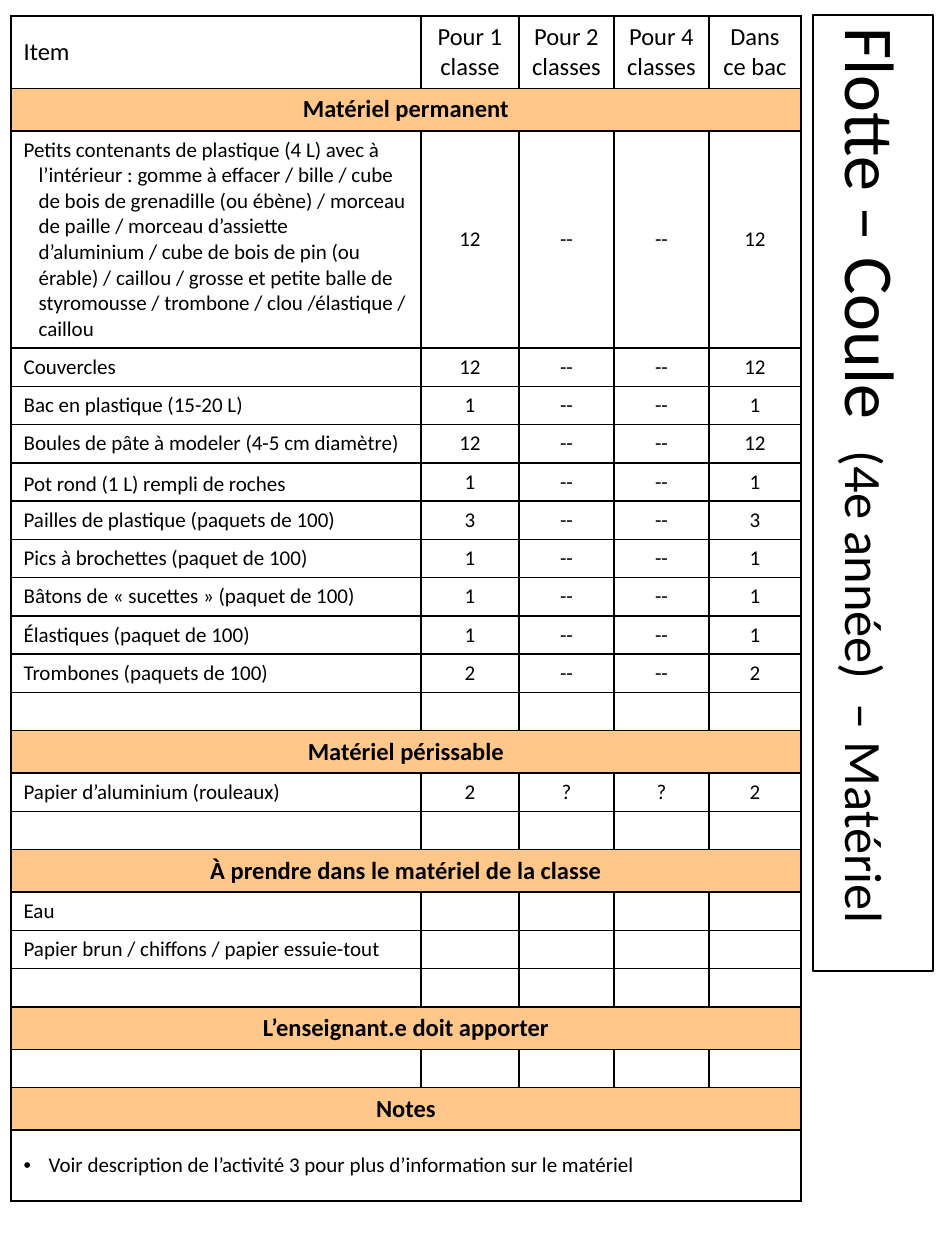
"""Build the one-page material checklist for the Flotte – Coule activity."""
from dataclasses import dataclass

from lxml.etree import SubElement
from pptx import Presentation
from pptx.dml.color import RGBColor
from pptx.enum.text import MSO_ANCHOR, MSO_AUTO_SIZE, PP_ALIGN
from pptx.oxml.ns import qn
from pptx.util import Pt

PX = 914400 // 126

TITLE = [
    ("Flotte – Coule", 40, 0),
    (" ", 40, 9),
    ("(4e année)", 30, 0),
    (" ", 30, 7),
    ("– Matériel", 30, 0),
]
HEADINGS = ["Item", "Pour 1 classe", "Pour 2 classes", "Pour 4 classes", "Dans ce bac"]
BLANK = ("", "", "")
KITS = (
    "Petits contenants de plastique (4 L) avec à l’intérieur : gomme à effacer / bille / "
    "cube de bois de grenadille (ou ébène) / morceau de paille / morceau d’assiette "
    "d’aluminium / cube de bois de pin (ou érable) / caillou / grosse et petite balle de "
    "styromousse / trombone / clou /élastique / caillou"
)
ROCK_POT = "Pot rond (1 L) rempli de roches"
SECTIONS = [
    ("Matériel permanent", [
        (KITS, "12", "--"),
        ("Couvercles", "12", "--"),
        ("Bac en plastique (15-20 L)", "1", "--"),
        ("Boules de pâte à modeler (4-5 cm diamètre)", "12", "--"),
        (ROCK_POT, "1", "--"),
        ("Pailles de plastique (paquets de 100)", "3", "--"),
        ("Pics à brochettes (paquet de 100)", "1", "--"),
        ("Bâtons de «\u00a0sucettes\u00a0» (paquet de 100)", "1", "--"),
        ("Élastiques (paquet de 100)", "1", "--"),
        ("Trombones (paquets de 100)", "2", "--"),
        BLANK,
    ]),
    ("Matériel périssable", [("Papier d’aluminium (rouleaux)", "2", "?"), BLANK]),
    ("À prendre dans le matériel de la classe", [
        ("Eau", "", ""),
        ("Papier brun / chiffons / papier essuie-tout", "", ""),
        BLANK,
    ]),
    ("L’enseignant.e doit apporter", [BLANK]),
]
NOTES_HEADING = "Notes"
NOTE = "Voir description de l’activité 3 pour plus d’information sur le matériel"

COLUMNS = [410, 98, 95, 95, 92]
HEIGHTS = {"head": 72, "section": 42, "item": 38, "note": 71}
KITS_HEIGHT = 217
TABLE_LEFT, TABLE_TOP = 11, 16
TITLE_BOX = (395, 433, 956, 120)
ITEM_HANG, NOTE_HANG = 15, 25


@dataclass(frozen=True)
class Theme:
    font: str = "Calibri"
    bullet_font: str = "Arial"
    ink: RGBColor = RGBColor(0, 0, 0)
    band: RGBColor = RGBColor(0xFF, 0xC7, 0x89)
    heading: int = 14
    body: int = 12
    grid: float = 1
    frame: float = 1.5


THEME = Theme()


def style_run(run, size, bold=False):
    run.font.name = THEME.font
    run.font.size = Pt(size)
    run.font.bold = bold
    run.font.color.rgb = THEME.ink


def add_title(slide):
    title = slide.shapes.title
    title.left, title.top, title.width, title.height = (v * PX for v in TITLE_BOX)
    title.rotation = 90
    title.fill.background()
    title.line.color.rgb = THEME.ink
    title.line.width = Pt(THEME.frame)
    frame = title.text_frame
    frame.word_wrap = True
    frame.auto_size = MSO_AUTO_SIZE.NONE
    frame.vertical_anchor = MSO_ANCHOR.MIDDLE
    paragraph = frame.paragraphs[0]
    paragraph.alignment = PP_ALIGN.LEFT
    for words, size, spacing in TITLE:
        run = paragraph.add_run()
        run.text = words
        style_run(run, size)
        if spacing:
            run._r.get_or_add_rPr().set("spc", str(spacing * 100))


def draw_borders(cell):
    properties = cell._tc.get_or_add_tcPr()
    for side in ("lnL", "lnR", "lnT", "lnB"):
        border = SubElement(properties, qn(f"a:{side}"), w=str(Pt(THEME.grid)))
        paint = SubElement(border, qn("a:solidFill"))
        SubElement(paint, qn("a:srgbClr"), val=str(THEME.ink))


def hang(paragraph, indent, bullet=None):
    properties = paragraph._p.get_or_add_pPr()
    properties.set("marL", str(indent * PX))
    properties.set("indent", str(-indent * PX))
    if bullet:
        SubElement(properties, qn("a:buFont"), typeface=THEME.bullet_font)
        SubElement(properties, qn("a:buChar"), char=bullet)


def fill_cell(cell, words, kind, column):
    draw_borders(cell)
    if kind == "section":
        cell.fill.solid()
        cell.fill.fore_color.rgb = THEME.band
    else:
        cell.fill.background()
    cell.vertical_anchor = MSO_ANCHOR.MIDDLE
    size = THEME.heading if kind in ("head", "section") else THEME.body
    paragraph = cell.text_frame.paragraphs[0]
    if not words:
        SubElement(paragraph._p, qn("a:endParaRPr"), sz=str(size * 100))
        return
    paragraph.text = words
    centred = column > 0 or kind == "section"
    paragraph.alignment = PP_ALIGN.CENTER if centred else PP_ALIGN.LEFT
    if kind == "note":
        hang(paragraph, NOTE_HANG, "•")
    elif kind == "item" and column == 0:
        hang(paragraph, ITEM_HANG)
    if words == ROCK_POT:
        paragraph.line_spacing = 1.15
        cell.margin_top = cell.margin_bottom = 0
    style_run(paragraph.runs[0], size, kind == "section")


def checklist_rows():
    rows = [("head", HEADINGS)]
    for heading, items in SECTIONS:
        rows.append(("section", [heading]))
        rows += [("item", [item, one, more, more, one]) for item, one, more in items]
    return rows + [("section", [NOTES_HEADING]), ("note", [NOTE])]


def add_checklist(slide):
    rows = checklist_rows()
    heights = [KITS_HEIGHT if words[0] == KITS else HEIGHTS[kind] for kind, words in rows]
    table = slide.shapes.add_table(
        len(rows), len(COLUMNS), TABLE_LEFT * PX, TABLE_TOP * PX,
        sum(COLUMNS) * PX, sum(heights) * PX,
    ).table
    table.first_row = table.horz_banding = False
    for column, width in zip(table.columns, COLUMNS):
        column.width = width * PX
    for r, (kind, words) in enumerate(rows):
        table.rows[r].height = heights[r] * PX
        if len(words) == 1:
            table.cell(r, 0).merge(table.cell(r, len(COLUMNS) - 1))
        for c in range(len(COLUMNS)):
            fill_cell(table.cell(r, c), words[c] if c < len(words) else "", kind, c)


def main():
    deck = Presentation()
    deck.slide_width, deck.slide_height = 945 * PX, 1260 * PX
    slide = deck.slides.add_slide(deck.slide_layouts[5])
    add_title(slide)
    add_checklist(slide)
    deck.save("out.pptx")


if __name__ == "__main__":
    main()
